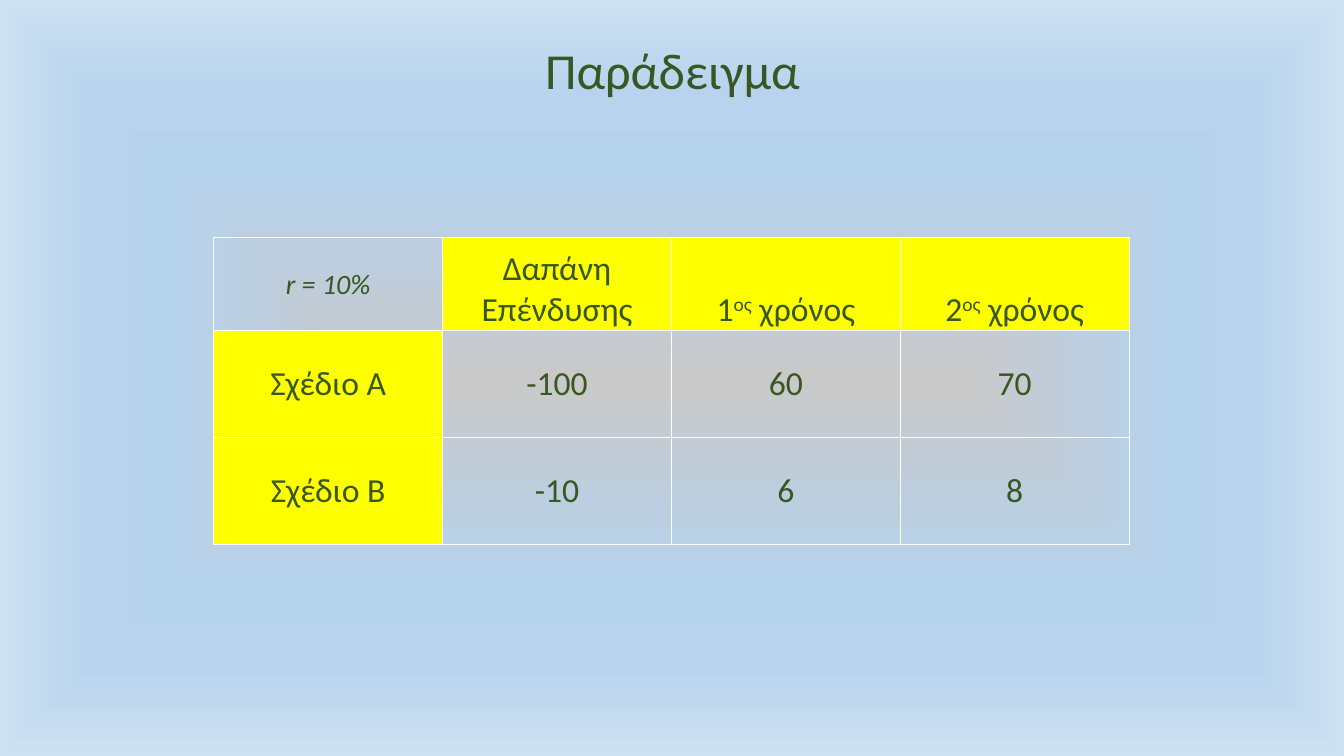
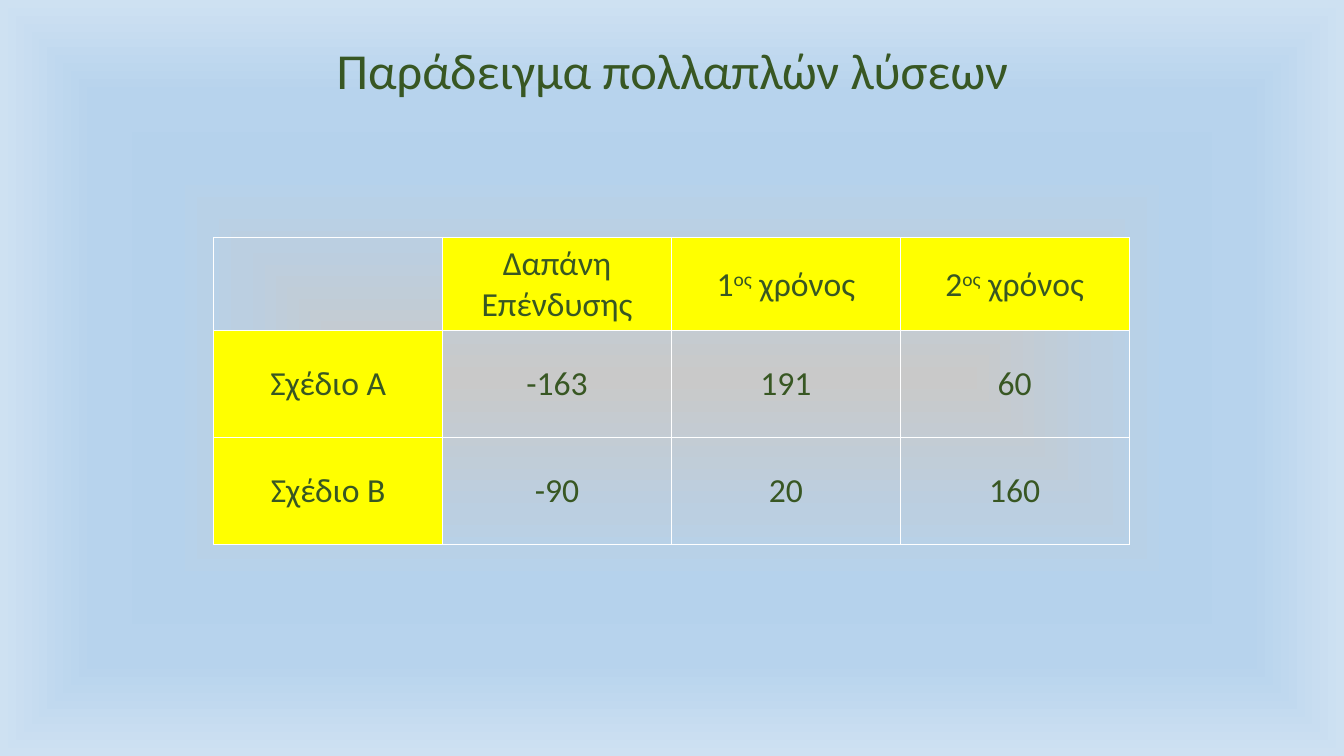
from pptx import Presentation
from pptx.dml.color import RGBColor
from pptx.enum.text import MSO_ANCHOR, PP_ALIGN
from pptx.oxml import parse_xml
from pptx.oxml.ns import nsdecls
from pptx.util import Inches, Pt

CENTER = PP_ALIGN.CENTER
MIDDLE, BOTTOM = MSO_ANCHOR.MIDDLE, MSO_ANCHOR.BOTTOM
COLORS = {"text": "385723", "label": "FFFF00", "border": "FFFFFF"}
BACKDROP = [(0, "C9C9C9"), (36, "BBCFE1"), (45, "B8D1E7"), (54, "B5D2EC"),
            (65, "B5D2EC"), (75, "B7D3ED"), (100, "CEE1F2")]
FONT = "Calibri"
TITLE_BOX = (0.92, 0, 11.5, 1.45)
TABLE_BOX = (2.12, 2.36, 9.08, 3.04)
HEADER_HEIGHT = 0.92
CELL_MARGINS = {"margin_left": Inches(0.01), "margin_right": Inches(0.01),
                "margin_top": Inches(0.01), "margin_bottom": 0}
TITLE_FORMAT = {"size": Pt(36)}
CELL_FORMAT = {"size": Pt(24)}
RATE_FORMAT = {"size": Pt(20), "italic": True}
HEADERS = ["Δαπάνη Επένδυσης", "1^ος^ χρόνος", "2^ος^ χρόνος"]
SLIDES = [
    {"title": "Παράδειγμα", "corner": "r = 10%", "header_anchor": BOTTOM,
     "rows": [["Σχέδιο Α", "-100", "60", "70"], ["Σχέδιο Β", "-10", "6", "8"]]},
    {"title": "Παράδειγμα πολλαπλών λύσεων", "corner": "", "header_anchor": MIDDLE,
     "rows": [["Σχέδιο Α", "-163", "191", "60"], ["Σχέδιο Β", "-90", "20", "160"]]},
]


def set_backdrop(master):
    """Give the master a gradient that spreads from the centre."""
    master.background.fill.gradient()
    grad = master.element.xpath("p:cSld/p:bg/p:bgPr/a:gradFill")[0]
    for child in list(grad):
        grad.remove(child)
    stops = "".join(f'<a:gs pos="{pos * 1000}"><a:srgbClr val="{color}"/></a:gs>'
                    for pos, color in BACKDROP)
    grad.append(parse_xml(f'<a:gsLst {nsdecls("a")}>{stops}</a:gsLst>'))
    grad.append(parse_xml(
        f'<a:path {nsdecls("a")} path="shape">'
        '<a:fillToRect l="50000" t="50000" r="50000" b="50000"/></a:path>'))


def write(p, text, formats):
    """Write centred text, raising the parts between carets."""
    p.alignment = CENTER
    for i, part in enumerate(text.split("^")):
        if not part:
            continue
        r = p.add_run()
        r.text = part
        r.font.name = FONT
        r.font.color.rgb = RGBColor.from_string(COLORS["text"])
        for name, value in formats.items():
            setattr(r.font, name, value)
        if i % 2:
            r.font._element.set("baseline", "30000")


def add_title(s, box, text):
    """Place the slide title in its box."""
    tf = s.shapes.add_textbox(*map(Inches, box)).text_frame
    tf.word_wrap = True
    tf.vertical_anchor = MIDDLE
    p = tf.paragraphs[0]
    p.line_spacing = 0.9
    write(p, text, TITLE_FORMAT)


def style_cell(cell, anchor, is_label):
    """Set the margins, borders and fill of a cell."""
    for name, value in CELL_MARGINS.items():
        setattr(cell, name, value)
    cell.vertical_anchor = anchor
    tcPr = cell._tc.get_or_add_tcPr()
    for side in "LRTB":
        tcPr.append(parse_xml(
            f'<a:ln{side} {nsdecls("a")} w="{Pt(1)}"><a:solidFill>'
            f'<a:srgbClr val="{COLORS["border"]}"/></a:solidFill></a:ln{side}>'))
    if is_label:
        cell.fill.solid()
        cell.fill.fore_color.rgb = RGBColor.from_string(COLORS["label"])
    else:
        cell.fill.background()


def add_plan_table(s, box, corner, header_anchor, rows):
    """Place the table of investment plans in its box."""
    grid = [[corner] + HEADERS] + rows
    table = s.shapes.add_table(len(grid), len(grid[0]), *map(Inches, box)).table
    table.first_row = table.horz_banding = False
    width, height = box[2:]
    for col in table.columns:
        col.width = Inches(width / len(grid[0]))
    for i, row in enumerate(table.rows):
        row.height = Inches((height - HEADER_HEIGHT) / len(rows) if i else HEADER_HEIGHT)
    for i, texts in enumerate(grid):
        for j, text in enumerate(texts):
            cell = table.cell(i, j)
            is_header = i == 0 and j > 0
            style_cell(cell, header_anchor if is_header else MIDDLE, (i == 0) != (j == 0))
            write(cell.text_frame.paragraphs[0], text,
                  CELL_FORMAT if i or j else RATE_FORMAT)


def add_example_slide(prs, title, **plan):
    """Add one slide with a title and a table."""
    s = prs.slides.add_slide(prs.slide_layouts[6])
    add_title(s, TITLE_BOX, title)
    add_plan_table(s, TABLE_BOX, **plan)


def main():
    """Build and save the presentation."""
    prs = Presentation()
    prs.slide_width, prs.slide_height = Inches(13.33), Inches(7.5)
    set_backdrop(prs.slide_master)
    for content in SLIDES:
        add_example_slide(prs, **content)
    prs.save("out.pptx")


if __name__ == "__main__":
    main()
